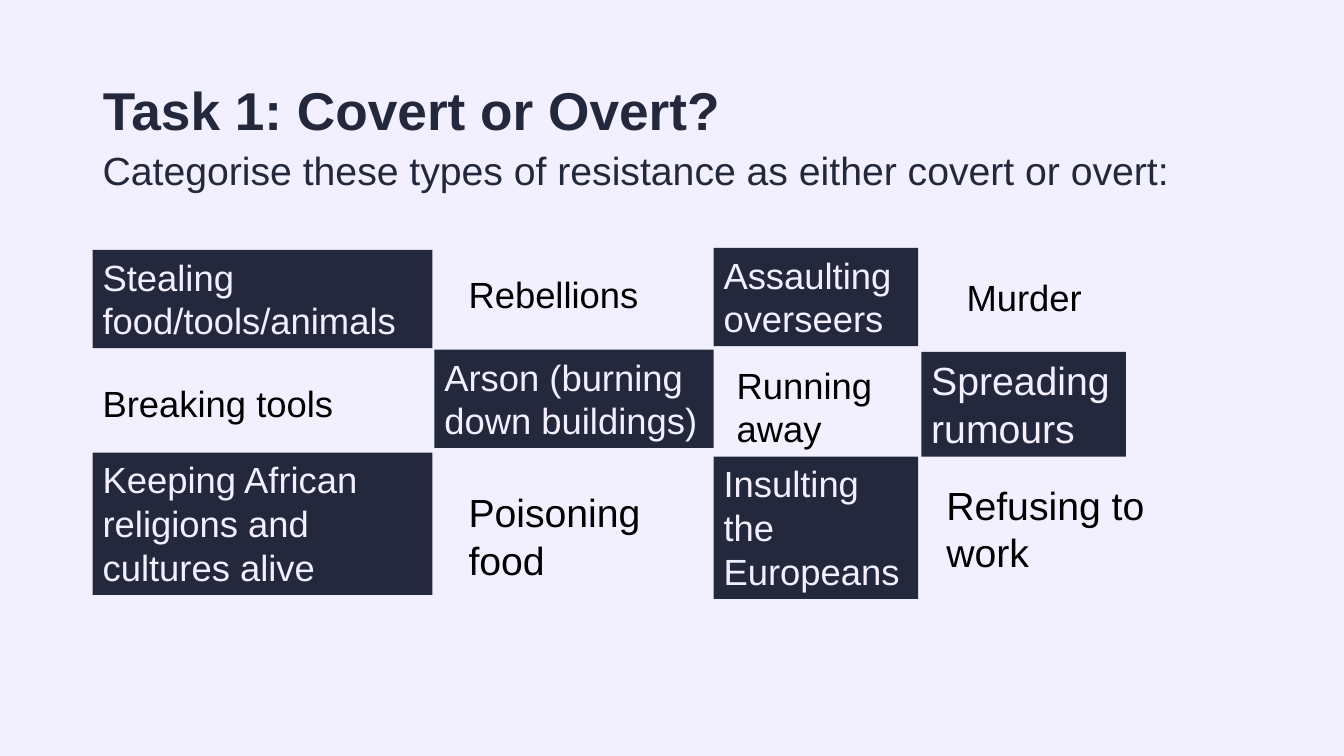
"""Build the covert or overt resistance sorting task slide."""
from dataclasses import dataclass

from pptx import Presentation
from pptx.dml.color import RGBColor
from pptx.enum import text as t
from pptx.slide import Slide
from pptx.text.text import TextFrame
from pptx.util import Pt


@dataclass(frozen=True)
class Theme:
    font: str = "Arial"
    pale: RGBColor = RGBColor(0xF2, 0xF0, 0xFF)
    navy: RGBColor = RGBColor(0x24, 0x28, 0x3C)
    black: RGBColor = RGBColor(0, 0, 0)
    title_size: float = 38
    large_size: float = 28
    card_size: float = 26
    line_height: float = 1.21
    padding: float = 7.2


THEME = Theme()


@dataclass(frozen=True)
class Card:
    wording: str
    left: float
    top: float
    width: float
    lines: int = 2
    dark: bool = False
    size: float = THEME.card_size

    @property
    def height(self) -> float:
        return self.lines * self.size * THEME.line_height + THEME.padding


MARGIN = 66.24
HEADING_WIDTH = 828
REBELLION_LEFT, ARSON_LEFT, ASSAULT_LEFT = 327.6, 310.32, 509.76
WIDE, MEDIUM, LOOSE, NARROW = 242.64, 199.44, 177.84, 146.16

CARDS = [
    Card("Stealing food/tools/animals", MARGIN, 178.56, WIDE, dark=True),
    Card("Assaulting overseers", ASSAULT_LEFT, 177.12, NARROW, dark=True),
    Card("Rebellions", REBELLION_LEFT, 190.8, LOOSE, lines=1),
    Card("Murder", 683.28, 192.96, 108.72, lines=1),
    Card("Breaking tools", MARGIN, 268.56, MEDIUM, lines=1),
    Card("Arson (burning down buildings)", ARSON_LEFT, 249.84, MEDIUM, dark=True),
    Card("Running away", 519.12, 255.6, 127.44),
    Card("Spreading rumours", 658.08, 251.28, NARROW, dark=True, size=THEME.large_size),
    Card("Keeping African religions and cultures alive", MARGIN, 323.28, WIDE, lines=3, dark=True),
    Card("Poisoning food", REBELLION_LEFT, 345.6, LOOSE, size=THEME.large_size),
    Card("Insulting the Europeans", ASSAULT_LEFT, 326.16, NARROW, lines=3, dark=True),
    Card("Refusing to work", 668.88, 340.56, LOOSE, size=THEME.large_size),
]


def write(frame: TextFrame, wording: str, size: float, color: RGBColor,
          bold: bool = False, spacing: float = 1.0) -> None:
    frame.word_wrap = True
    paragraph = frame.paragraphs[0]
    paragraph.text = wording
    paragraph.alignment = t.PP_ALIGN.LEFT
    paragraph.line_spacing = spacing
    paragraph.font.name = THEME.font
    paragraph.font.size = Pt(size)
    paragraph.font.bold = bold
    paragraph.font.color.rgb = color


def add_heading(slide: Slide) -> None:
    title = slide.shapes.title
    title.left, title.top = Pt(MARGIN), Pt(28.8)
    title.width, title.height = Pt(HEADING_WIDTH), Pt(104.4)
    title.text_frame.auto_size = t.MSO_AUTO_SIZE.NONE
    title.text_frame.vertical_anchor = t.MSO_ANCHOR.MIDDLE
    write(title.text_frame, "Task 1: Covert or Overt?", THEME.title_size,
          THEME.navy, bold=True, spacing=0.9)
    instruction = slide.shapes.add_textbox(
        Pt(MARGIN), Pt(104.4), Pt(HEADING_WIDTH), Pt(58.32))
    write(instruction.text_frame,
          "Categorise these types of resistance as either covert or overt:",
          THEME.large_size, THEME.navy, spacing=0.9)


def add_card(slide: Slide, card: Card) -> None:
    box = slide.shapes.add_textbox(
        Pt(card.left), Pt(card.top), Pt(card.width), Pt(card.height))
    if card.dark:
        box.fill.solid()
        box.fill.fore_color.rgb = THEME.navy
    write(box.text_frame, card.wording, card.size,
          THEME.pale if card.dark else THEME.black)
    box.text_frame.auto_size = t.MSO_AUTO_SIZE.SHAPE_TO_FIT_TEXT


def main() -> None:
    deck = Presentation()
    deck.slide_width, deck.slide_height = Pt(960), Pt(540)
    slide = deck.slides.add_slide(deck.slide_layouts.get_by_name("Title Only"))
    slide.background.fill.solid()
    slide.background.fill.fore_color.rgb = THEME.pale
    add_heading(slide)
    for card in CARDS:
        add_card(slide, card)
    deck.save("out.pptx")


if __name__ == "__main__":
    main()
